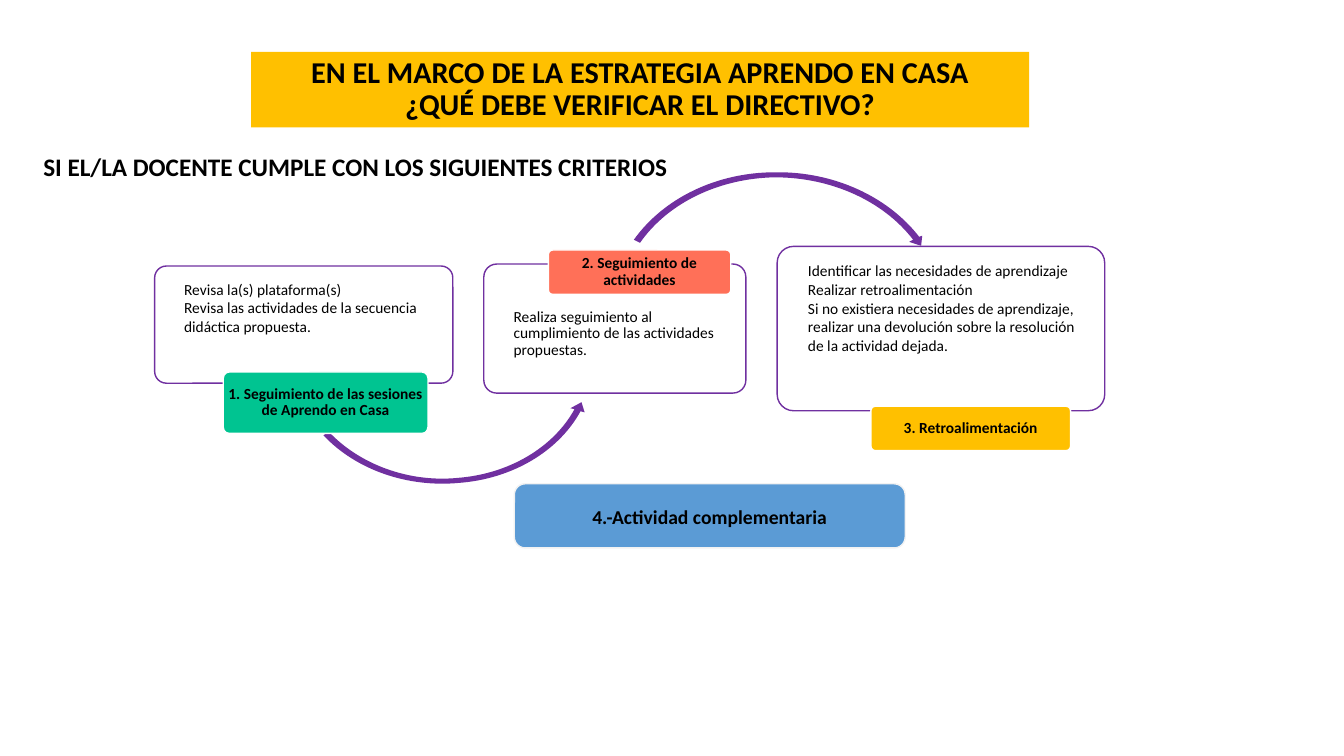
import lxml.etree
import pptx
import pptx.dml.color
import pptx.enum.shapes
import pptx.enum.text
import pptx.oxml.ns
import pptx.util

Pt = pptx.util.Pt
qn = pptx.oxml.ns.qn
SHAPES = pptx.enum.shapes.MSO_SHAPE
ALIGN = pptx.enum.text.PP_ALIGN
ANCHOR = pptx.enum.text.MSO_ANCHOR

COLORS = {
    "black": "000000", "white": "FFFFFF", "pale": "F2F2F2", "purple": "7030A0",
    "green": "00C491", "coral": "FF7058", "amber": "FFC000", "blue": "5B9BD5",
}

CARDS = [
    {
        "box": (110.5, 190, 213, 83.7), "top": 9, "gap": 1.6,
        "lines": ["Revisa la(s) plataforma(s)", "Revisa las actividades de la secuencia",
                  "didáctica propuesta."],
        "tag": "1. Seguimiento de las sesiones de Aprendo en Casa",
        "tag_box": (49, 75.7, 146.2, 43.9), "tag_color": "green",
        "arrow": "lower",
    },
    {
        "box": (345.6, 188.6, 187.2, 92.2), "top": 29.4, "gap": 0,
        "lines": ["Realiza seguimiento al", "cumplimiento de las actividades", "propuestas."],
        "tag": "2. Seguimiento de actividades",
        "tag_box": (46.1, -10, 130.3, 31.7), "tag_color": "coral",
        "arrow": "upper",
    },
    {
        "box": (555.1, 176, 234, 117.4), "top": 8.8, "gap": 1.6,
        "lines": ["Identificar las necesidades de aprendizaje", "Realizar retroalimentación",
                  "Si no existiera necesidades de aprendizaje,",
                  "realizar una devolución sobre la resolución", "de la actividad dejada."],
        "tag": "3. Retroalimentación",
        "tag_box": (67, 114.2, 142.6, 31.7), "tag_color": "amber",
        "arrow": None,
    },
]

ARROWS = {
    "lower": ((205.2, 162, 223.2, 186.5), [
        [(25.9, 149)], [(29.5, 146.2)],
        [(51.8, 169.9), (87.1, 182.9), (122.4, 179.3)],
        [(158.4, 176.4), (190.1, 157.7), (205.2, 130.3)],
        [(202.3, 129.6)], [(210.2, 125.3)], [(212.4, 132.5)], [(209.5, 131.8)],
        [(193.7, 160.6), (160.6, 180), (123.1, 182.9)],
        [(85.7, 186.5), (49, 173.5), (25.9, 149)],
    ]),
    "upper": ((433.4, 120.2, 244.8, 204.5), [
        [(19.4, 51.1)],
        [(41, 20.9), (79.2, 2.9), (120.2, 2.9)],
        [(162, 2.2), (200.9, 20.2), (223.2, 49)],
        [(225.4, 48.2)], [(224.6, 55.4)], [(216, 52.6)], [(218.9, 51.1)],
        [(197.3, 23), (159.8, 6.5), (120.2, 6.5)],
        [(80.6, 7.2), (43.9, 24.5), (23.8, 53.3)],
    ]),
}


def rgb(name):
    """Return the named colour."""
    return pptx.dml.color.RGBColor.from_string(COLORS[name])


def set_values(target, values):
    """Set each attribute of the target from a dict."""
    for name, value in values.items():
        setattr(target, name, value)


def paint(shape, fill, line=None):
    """Give a shape its fill, its line and no shadow."""
    shape.shadow.inherit = False
    shape.fill.solid()
    shape.fill.fore_color.rgb = rgb(fill)
    if line:
        shape.line.color.rgb = rgb(line)
        shape.line.width = Pt(1)
    else:
        shape.line.fill.background()


def add_panel(slide, box, kind, fill, line=None, corner=None):
    """Add a painted preset shape in a box."""
    shape = slide.shapes.add_shape(kind, *map(Pt, box))
    paint(shape, fill, line)
    if corner:
        shape.adjustments[0] = corner
    return shape


def write(shape, lines, size, bold=False, margins=(7.2, 3.6, 7.2, 3.6), gap=0,
          anchor=ANCHOR.MIDDLE, wrap=True, alignment=ALIGN.CENTER, spacing=0.9):
    """Fill a shape with one paragraph per line."""
    frame = shape.text_frame
    sides = ("margin_left", "margin_top", "margin_right", "margin_bottom")
    set_values(frame, dict(zip(sides, map(Pt, margins))))
    set_values(frame, {"word_wrap": wrap, "vertical_anchor": anchor})
    for index, line in enumerate(lines):
        paragraph = frame.add_paragraph() if index else frame.paragraphs[0]
        paragraph.text = line
        set_values(paragraph, {"alignment": alignment, "line_spacing": spacing,
                               "space_before": Pt(gap if index else 0)})
        for run in paragraph.runs:
            set_values(run.font, {"name": "Calibri", "size": Pt(size), "bold": bold})
            run.font.color.rgb = rgb("black")


def add_arrow(slide, box, outline):
    """Draw a curved arrow whose outline is relative to its box."""
    left, top, width, height = map(Pt, box)
    builder = slide.shapes.build_freeform(left, top)
    builder.add_line_segments([(left + width, top), (left + width, top + height),
                               (left, top + height)])
    arrow = builder.convert_to_shape()
    paint(arrow, "purple")
    contour = arrow._element.find(".//" + qn("a:path"))
    for child in list(contour):
        contour.remove(child)
    for index, points in enumerate(outline):
        kind = "a:cubicBezTo" if len(points) == 3 else "a:lnTo" if index else "a:moveTo"
        segment = lxml.etree.SubElement(contour, qn(kind))
        for x, y in points:
            lxml.etree.SubElement(segment, qn("a:pt"), x=str(int(Pt(x))), y=str(int(Pt(y))))
    lxml.etree.SubElement(contour, qn("a:close"))


def add_card(slide, card):
    """Place a criterion card, the arrow leaving it and its tag."""
    left, top, width, height = card["box"]
    panel = add_panel(slide, card["box"], SHAPES.ROUNDED_RECTANGLE, "white", "purple", 0.1)
    color = panel._element.spPr.find(qn("a:solidFill") + "/" + qn("a:srgbClr"))
    lxml.etree.SubElement(color, qn("a:alpha"), val="90000")
    write(panel, card["lines"], 11, margins=(18.6, card["top"], 4, 4), gap=card["gap"],
          anchor=ANCHOR.TOP, alignment=ALIGN.LEFT, spacing=0.89)
    if card["arrow"]:
        add_arrow(slide, *ARROWS[card["arrow"]])
    x, y, tag_width, tag_height = card["tag_box"]
    tag = add_panel(slide, (left + x, top + y, tag_width, tag_height),
                    SHAPES.ROUNDED_RECTANGLE, card["tag_color"], "white", 0.1)
    write(tag, [card["tag"]], 11, bold=True, margins=(1, 1, 1, 1), spacing=0.89)


def add_title(slide, box):
    """Place the title band."""
    band = add_panel(slide, box, SHAPES.RECTANGLE, "amber")
    title = "EN EL MARCO DE LA ESTRATEGIA APRENDO EN CASA\v¿QUÉ DEBE VERIFICAR EL DIRECTIVO?"
    write(band, [title], 21.6, bold=True)


def add_extra_activity(slide, box):
    """Place the complementary activity button."""
    button = add_panel(slide, box, SHAPES.ROUNDED_RECTANGLE, "blue", "pale", 0.17)
    write(button, ["4.-Actividad complementaria"], 14, bold=True, spacing=1.07)


def add_heading(slide, box):
    """Place the heading above the cards."""
    heading = slide.shapes.add_textbox(*map(Pt, box))
    write(heading, ["SI EL/LA DOCENTE CUMPLE CON LOS SIGUIENTES CRITERIOS"], 18, bold=True,
          anchor=ANCHOR.TOP, wrap=False, alignment=ALIGN.LEFT, spacing=1.0)
    heading.text_frame.auto_size = pptx.enum.text.MSO_AUTO_SIZE.SHAPE_TO_FIT_TEXT


def main():
    """Build and save the slide."""
    presentation = pptx.Presentation()
    set_values(presentation, {"slide_width": Pt(960), "slide_height": Pt(540)})
    slide = presentation.slides.add_slide(presentation.slide_layouts[6])
    for card in CARDS:
        add_card(slide, card)
    add_title(slide, (179.3, 37, 555.8, 54))
    add_extra_activity(slide, (367.4, 345.6, 279.2, 45.8))
    add_heading(slide, (23.8, 104.6, 464.4, 29))
    presentation.save("out.pptx")


if __name__ == "__main__":
    main()
